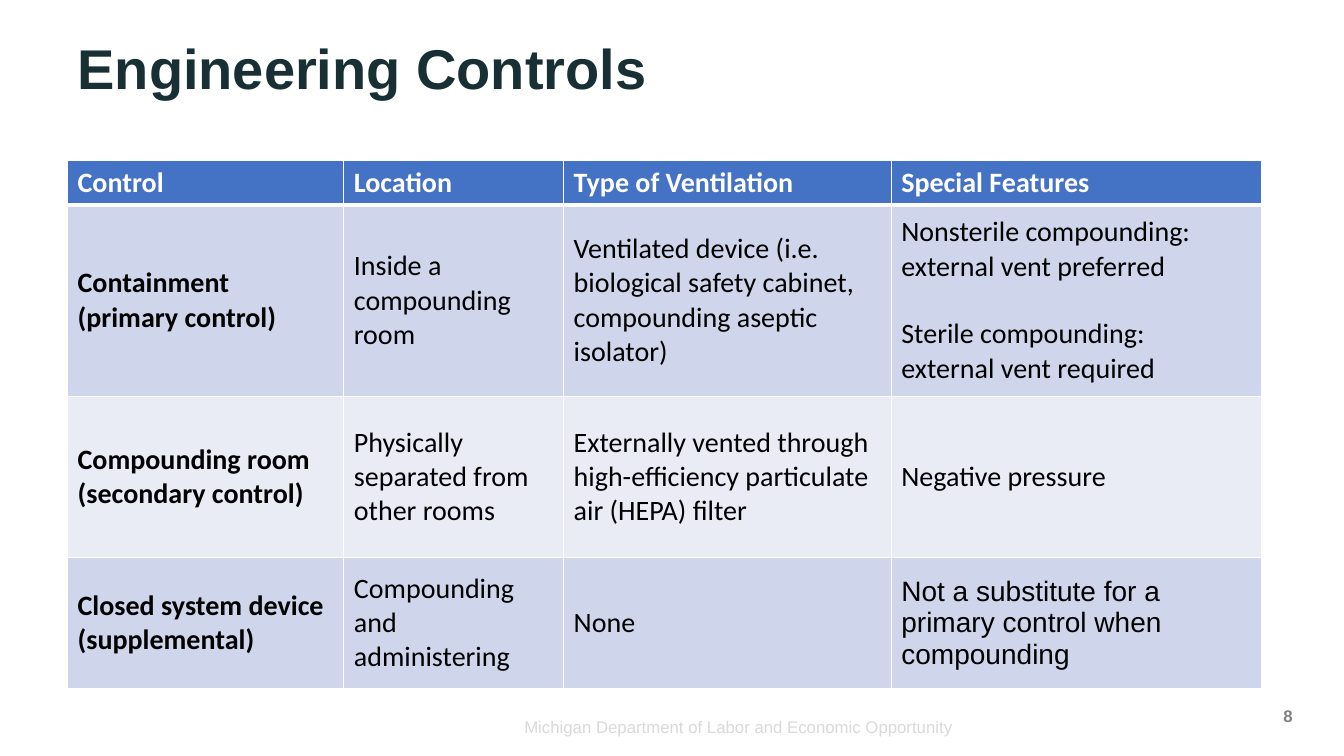
from lxml.etree import SubElement
from pptx import Presentation
from pptx.dml.color import RGBColor
from pptx.enum.text import MSO_ANCHOR as Anchor, PP_ALIGN as Align
from pptx.oxml.ns import qn
from pptx.util import Inches, Pt

WHITE, BLACK = "FFFFFF", "000000"
HEADER_BLUE, BAND_DARK, BAND_LIGHT = "4472C4", "CFD5EA", "E9EBF5"


def write(frame, text, color, align=Align.LEFT, **font_values):
    """Fill a text frame, one paragraph per line, in a single format."""
    frame.text = text
    for paragraph in frame.paragraphs:
        paragraph.alignment = align
        for name, value in font_values.items():
            setattr(paragraph.font, name, value)
        paragraph.font.color.rgb = RGBColor.from_string(color)


def add_border(cell, side, points):
    line = SubElement(cell._tc.get_or_add_tcPr(), qn(f"a:{side}"), w=str(Pt(points)))
    fill = SubElement(line, qn("a:solidFill"))
    SubElement(fill, qn("a:srgbClr"), val=WHITE)


deck = Presentation()
deck.slide_width, deck.slide_height = Inches(13.33), Inches(7.5)
slide = deck.slides.add_slide(deck.slide_layouts[5])

# Title
title = slide.shapes.title
title.left, title.top = Inches(0.67), Inches(0.08)
title.width, title.height = Inches(10.89), Inches(1.25)
title.text_frame.vertical_anchor = Anchor.MIDDLE
title.text_frame.word_wrap = True
write(title.text_frame, "Engineering Controls", "182F34",
      name="Arial", size=Pt(40), bold=True)
title.text_frame.paragraphs[0].line_spacing = 0.9

# Table of controls
controls = [
    ["Control", "Location", "Type of Ventilation", "Special Features"],
    ["Containment\n(primary control)",
     "Inside a compounding room",
     "Ventilated device (i.e. biological safety cabinet, compounding aseptic isolator)",
     "Nonsterile compounding: external vent preferred\n"
     "Sterile compounding:\nexternal vent required"],
    ["Compounding room\n(secondary control)",
     "Physically separated from other rooms",
     "Externally vented through high-efficiency particulate air (HEPA) filter",
     "Negative pressure"],
    ["Closed system device\n(supplemental)",
     "Compounding and administering",
     "None",
     "Not a substitute for a primary control when compounding"],
]
column_widths = [2.74, 2.18, 3.25, 3.67]
row_heights = [0.41, 1.9, 1.6, 1.3]

table = slide.shapes.add_table(
    len(row_heights), len(column_widths), Inches(0.67), Inches(1.59),
    Inches(sum(column_widths)), Inches(sum(row_heights))).table
for column, width in zip(table.columns, column_widths):
    column.width = Inches(width)
for row, height in zip(table.rows, row_heights):
    row.height = Inches(height)

for r, entries in enumerate(controls):
    header = r == 0
    band = HEADER_BLUE if header else BAND_DARK if r % 2 else BAND_LIGHT
    for c, entry in enumerate(entries):
        cell = table.cell(r, c)
        for side in ("lnL", "lnR", "lnT", "lnB"):
            thick = (r, side) in ((0, "lnB"), (1, "lnT"))
            add_border(cell, side, 3 if thick else 1)
        cell.fill.solid()
        cell.fill.fore_color.rgb = RGBColor.from_string(band)
        cell.vertical_anchor = Anchor.TOP if header else Anchor.MIDDLE
        write(cell.text_frame, entry, WHITE if header else BLACK,
              name="Calibri", size=Pt(20), bold=header or c == 0)

sterile_line = table.cell(1, 3).text_frame.paragraphs[1]
sterile_line.space_before = Pt(24)
for paragraph in table.cell(3, 3).text_frame.paragraphs:
    paragraph.font.name = "Arial"

# Page number and footer
footers = [
    ("8", (9.92, 6.9, 3, 0.4), Anchor.MIDDLE, "808080", True),
    ("Michigan Department of Labor and Economic Opportunity",
     (4.27, 7.06, 5.28, 0.3), Anchor.TOP, "D9D9D9", False),
]
for text, place, anchor, color, bold in footers:
    frame = slide.shapes.add_textbox(*map(Inches, place)).text_frame
    frame.word_wrap = True
    frame.vertical_anchor = anchor
    write(frame, text, color, Align.RIGHT, name="Arial", size=Pt(12), bold=bold)

deck.save("out.pptx")
